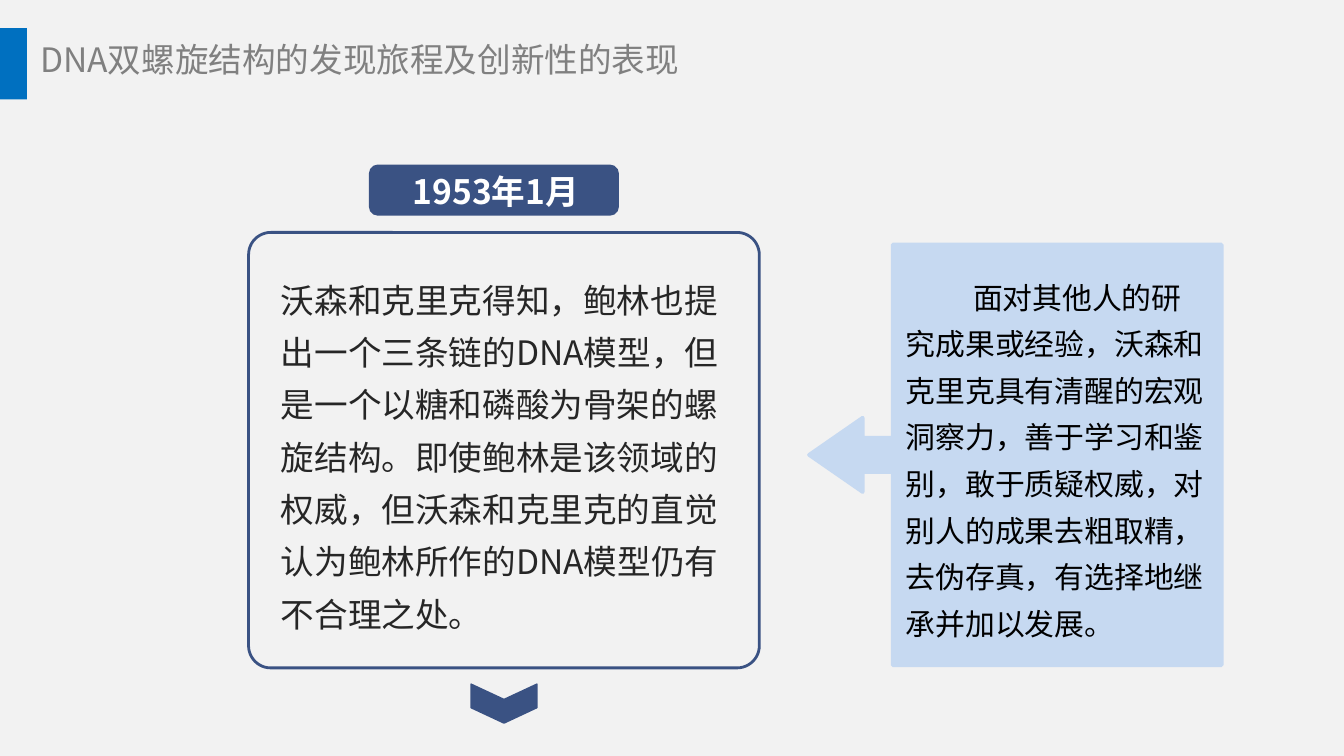
from lxml.etree import SubElement
from pptx import Presentation
from pptx.dml.color import RGBColor
from pptx.enum.shapes import MSO_SHAPE
from pptx.enum.text import MSO_ANCHOR, PP_ALIGN
from pptx.oxml.ns import qn
from pptx.util import Inches, Pt

FONT = "Noto Sans CJK SC"
NAVY, SKY, BLUE = "3A5283", "C6D9F1", "0070C0"
SLIDE_WIDTH = 10
SLIDE_HEIGHT = SLIDE_WIDTH * 9 / 16
TITLE = "DNA双螺旋结构的发现旅程及创新性的表现"
DATE = "1953年1月"
STORY = (
    "沃森和克里克得知，鲍林也提出一个三条链的DNA模型，"
    "但是一个以糖和磷酸为骨架的螺旋结构。即使鲍林是该领域的权威，"
    "但沃森和克里克的直觉认为鲍林所作的DNA模型仍有不合理之处。"
)
COMMENT = (
    "面对其他人的研究成果或经验，沃森和克里克具有清醒的宏观洞察力，"
    "善于学习和鉴别，敢于质疑权威，对别人的成果去粗取精，"
    "去伪存真，有选择地继承并加以发展。"
)


def color(value):
    """Turn a hex string into a colour."""
    return RGBColor.from_string(value)


def apply_formats(target, formats):
    """Set each attribute of the target from a dict."""
    for name, value in formats.items():
        setattr(target, name, value)


def add_shape(slide, kind, box, fill=None, line=None, width=0.75, adjustments=()):
    """Add a flat preset shape."""
    shape = slide.shapes.add_shape(kind, *map(Inches, box))
    shape.shadow.inherit = False
    for index, value in enumerate(adjustments):
        shape.adjustments[index] = value
    for target, value in ((shape.fill, fill), (shape.line.fill, line)):
        if value:
            target.solid()
            target.fore_color.rgb = color(value)
        else:
            target.background()
    if line:
        shape.line.width = Pt(width)
    return shape


def write_text(shape, text, text_color, size=18, bold=False, insets=(0.07, 0.03),
               wrap=True, anchor=MSO_ANCHOR.TOP, indent=0, **paragraph_formats):
    """Write one formatted paragraph into a shape."""
    horizontal, vertical = map(Inches, insets)
    frame = shape.text_frame
    apply_formats(frame, {
        "word_wrap": wrap, "vertical_anchor": anchor,
        "margin_left": horizontal, "margin_right": horizontal,
        "margin_top": vertical, "margin_bottom": vertical,
    })
    paragraph = frame.paragraphs[0]
    apply_formats(paragraph, {"alignment": PP_ALIGN.LEFT, **paragraph_formats})
    if indent:
        paragraph._p.get_or_add_pPr().set("indent", str(Inches(indent)))
    run = paragraph.add_run()
    run.text = text
    apply_formats(run.font, {"name": FONT, "size": Pt(size), "bold": bold})
    run.font.color.rgb = color(text_color)
    SubElement(run._r.get_or_add_rPr(), qn("a:ea"), typeface=FONT)


def add_text(slide, box, text, text_color, **formats):
    """Add a text box holding one paragraph."""
    write_text(slide.shapes.add_textbox(*map(Inches, box)), text, text_color, **formats)


def add_header(slide, left, top, width, height):
    """Place the blue tab and the slide title."""
    tab = 0.2
    add_shape(slide, MSO_SHAPE.RECTANGLE, (left, top, tab, height), BLUE)
    add_text(slide, (left + tab, top + 0.03, width - tab, 0.41), TITLE, "808080",
             insets=(0.1, 0.05), wrap=False)


def add_event(slide, left, top, width, height):
    """Place the date label, the framed story and the chevron below it."""
    add_shape(slide, MSO_SHAPE.ROUNDED_RECTANGLE, (left, top, width, height),
              line=NAVY, width=1.5, adjustments=[0.051])
    add_shape(slide, MSO_SHAPE.ROUNDED_RECTANGLE, (left + 0.9, top - 0.5, 1.85, 0.37),
              NAVY, NAVY, adjustments=[0.167])
    add_text(slide, (left + 1.01, top - 0.49, 1.66, 0.37), DATE, "FFFFFF",
             bold=True, alignment=PP_ALIGN.CENTER)
    chevron_width, chevron_height = 0.29, 0.49
    chevron = add_shape(
        slide, MSO_SHAPE.CHEVRON,
        (left + (width - chevron_width) / 2, top + height + 0.02,
         chevron_width, chevron_height),
        NAVY, NAVY, adjustments=[0.394])
    chevron.rotation = 90
    add_text(slide, (left + 0.17, top + 0.23, width - 0.32, height - 0.45), STORY,
             "262626", line_spacing=1.3)


def add_comment(slide, *box):
    """Place the callout that comments on the event."""
    callout = add_shape(slide, MSO_SHAPE.LEFT_ARROW_CALLOUT, box, SKY, SKY, 2,
                        [0.083, 0.09, 0.13, 0.797])
    write_text(callout, COMMENT, "000000", size=16, insets=(0.1, 0.05),
               anchor=MSO_ANCHOR.MIDDLE, indent=0.5, line_spacing=1.3)


def main():
    """Build and save the slide."""
    presentation = Presentation()
    apply_formats(presentation, {
        "slide_width": Inches(SLIDE_WIDTH), "slide_height": Inches(SLIDE_HEIGHT),
    })
    slide = presentation.slides.add_slide(presentation.slide_layouts[6])
    slide.background.fill.solid()
    slide.background.fill.fore_color.rgb = color("F2F2F2")
    add_header(slide, 0, 0.21, 5.28, 0.53)
    add_event(slide, 1.85, 1.73, 3.8, 3.24)
    add_comment(slide, 6.02, 1.82, 3.07, 3.13)
    presentation.save("out.pptx")


if __name__ == "__main__":
    main()
